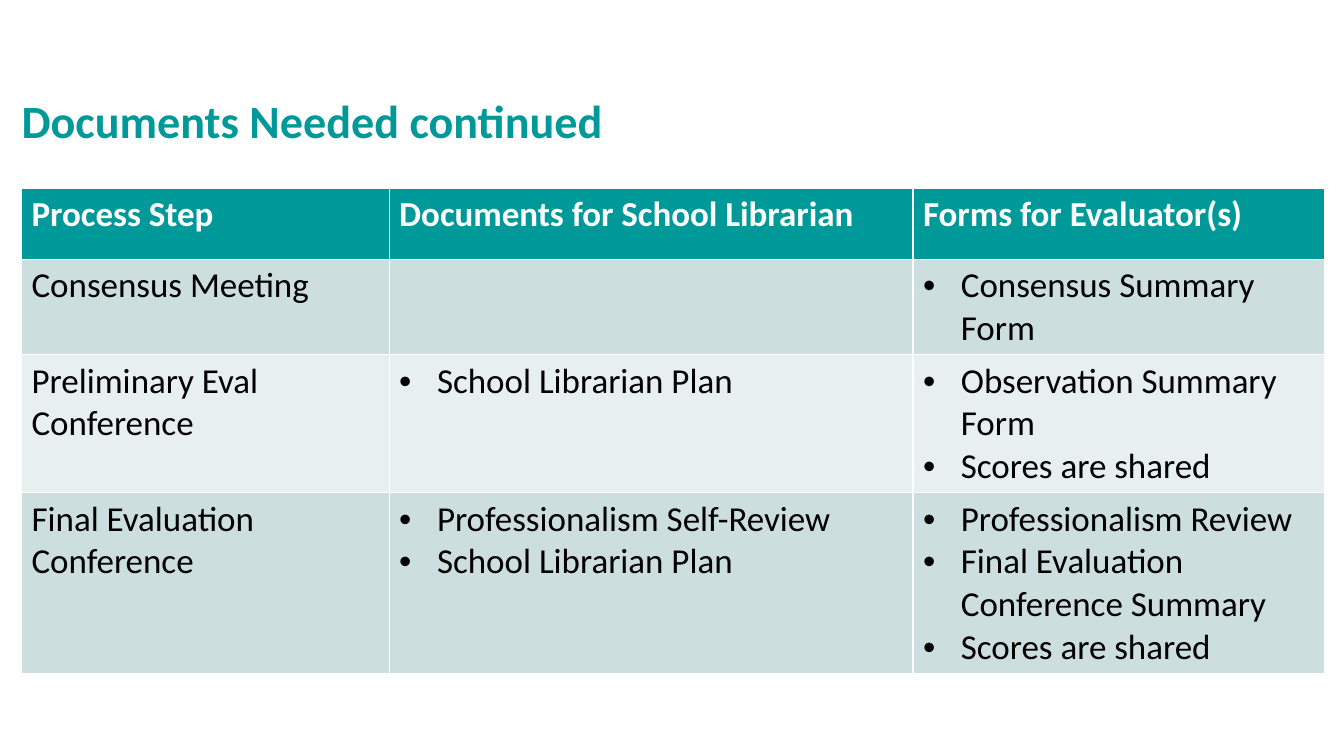
"""Build the slide listing documents needed for each evaluation step."""
from lxml import etree
from pptx import Presentation
from pptx.dml import color
from pptx.enum import text
from pptx.oxml import ns
from pptx.util import Pt


def add_run(p, words, size, hex_color, bold):
    r = p.add_run()
    r.text = words
    r.font.name = "Calibri"
    r.font.size = Pt(size)
    r.font.bold = bold
    r.font.color.rgb = rgb(hex_color)


def rgb(hex_color):
    return color.RGBColor.from_string(hex_color)


TEAL = "00999A"
FILLS = [TEAL, "CCDEDE", "E7EFEF", "CCDEDE"]
COL_WIDTHS = [262.6, 374.2, 294.2]
ROW_HEIGHTS = [50.4, 67.5, 98.5, 128.5]
ROWS = [
    [["Process Step"], ["Documents for School Librarian"], ["Forms for Evaluator(s)"]],
    [["Consensus Meeting"], [], ["Consensus Summary Form"]],
    [["Preliminary Eval Conference"], ["School Librarian Plan"],
     ["Observation Summary Form", "Scores are shared"]],
    [["Final Evaluation Conference"],
     ["Professionalism Self-Review", "School Librarian Plan"],
     ["Professionalism Review", "Final Evaluation Conference Summary", "Scores are shared"]],
]

prs = Presentation()
prs.slide_width, prs.slide_height = Pt(960), Pt(540)
s = prs.slides.add_slide(prs.slide_layouts[5])

title = s.shapes.title
title.left, title.top, title.width, title.height = Pt(15.4), Pt(65.5), Pt(590), Pt(40.3)
tf = title.text_frame
tf.margin_left = tf.margin_top = tf.margin_right = tf.margin_bottom = 0
tf.vertical_anchor = text.MSO_ANCHOR.BOTTOM
tf.auto_size = text.MSO_AUTO_SIZE.NONE
p = tf.paragraphs[0]
p.alignment = text.PP_ALIGN.LEFT
p.line_spacing = 0.85
add_run(p, "Documents Needed continued", 33, TEAL, True)

table = s.shapes.add_table(len(ROWS), len(COL_WIDTHS), Pt(15.4), Pt(134.8),
                           Pt(sum(COL_WIDTHS)), Pt(sum(ROW_HEIGHTS))).table
for column, width in zip(table.columns, COL_WIDTHS):
    column.width = Pt(width)

for i, row in enumerate(ROWS):
    table.rows[i].height = Pt(ROW_HEIGHTS[i])
    header = i == 0
    for j, items in enumerate(row):
        cell = table.cell(i, j)
        cell.fill.solid()
        cell.fill.fore_color.rgb = rgb(FILLS[i])
        tf = cell.text_frame
        for k, item in enumerate(items):
            p = tf.add_paragraph() if k else tf.paragraphs[0]
            add_run(p, item, 25, "FFFFFF" if header else "000000", header)
            if j and not header:
                pPr = p._p.get_or_add_pPr()
                pPr.set("marL", str(Pt(27)))
                pPr.set("indent", str(-Pt(27)))
                etree.SubElement(pPr, ns.qn("a:buFont"), typeface="Arial")
                etree.SubElement(pPr, ns.qn("a:buChar"), char="•")

prs.save("out.pptx")
